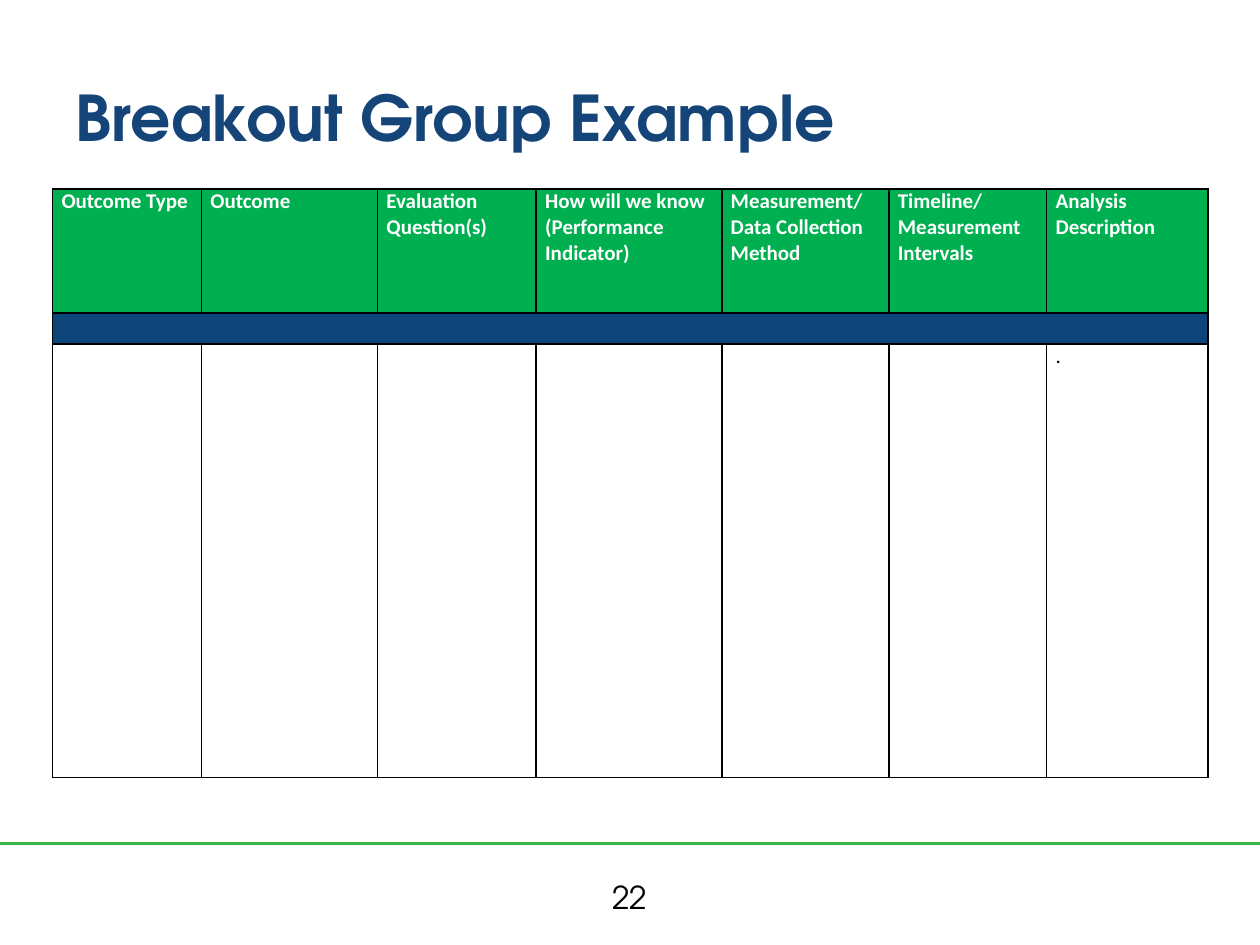
from dataclasses import dataclass

import lxml.etree
import pptx
import pptx.dml.color
import pptx.enum.shapes
import pptx.enum.text
import pptx.oxml.ns
import pptx.util

Cm = pptx.util.Cm
Pt = pptx.util.Pt
Align = pptx.enum.text.PP_ALIGN
Anchor = pptx.enum.text.MSO_ANCHOR
qn = pptx.oxml.ns.qn


@dataclass(frozen=True)
class Theme:
    display: str = "TeX Gyre Adventor"
    body: str = "Calibri"
    title_size: float = 36
    number_size: float = 18
    table_size: float = 12
    navy: str = "154578"
    band: str = "0D4479"
    header: str = "00B050"
    rule: str = "39B54A"
    black: str = "000000"
    white: str = "FFFFFF"


THEME = Theme()

HEADINGS = [
    ["Outcome Type"],
    ["Outcome"],
    ["Evaluation Question(s)"],
    ["How will we know", "(Performance Indicator)"],
    ["Measurement/", "Data Collection Method"],
    ["Timeline/", "Measurement Intervals"],
    ["Analysis Description"],
]
COLUMN_WIDTHS = [3, 3.55, 3.2, 3.74, 3.37, 3.18, 3.25]
ROW_HEIGHTS = [2.5, 0.62, 8.74]


def rgb(value):
    return pptx.dml.color.RGBColor.from_string(value)


def style(para, name, size, color, bold=False):
    font = para.font
    font.name, font.size, font.bold = name, Pt(size), bold
    font.color.rgb = rgb(color)


def add_text(page, text, left, top, width, height, size, color,
             bold=False, align=Align.LEFT, anchor=Anchor.TOP):
    box = page.shapes.add_textbox(Cm(left), Cm(top), Cm(width), Cm(height))
    frame = box.text_frame
    frame.word_wrap = True
    frame.vertical_anchor = anchor
    para = frame.paragraphs[0]
    para.text = text
    para.alignment = align
    style(para, THEME.display, size, color, bold)


def add_rule(page, top, width):
    rule = page.shapes.add_connector(
        pptx.enum.shapes.MSO_CONNECTOR.STRAIGHT, 0, Cm(top), Cm(width), Cm(top))
    rule.line.color.rgb = rgb(THEME.rule)
    rule.line.width = Pt(1.5)
    lxml.etree.SubElement(rule._element.spPr, qn("a:effectLst"))


def add_borders(cell):
    properties = cell._tc.get_or_add_tcPr()
    for position, side in enumerate(("lnL", "lnR", "lnT", "lnB")):
        line = lxml.etree.Element(qn(f"a:{side}"), w=str(Pt(1)))
        fill = lxml.etree.SubElement(line, qn("a:solidFill"))
        lxml.etree.SubElement(fill, qn("a:srgbClr"), val=THEME.black)
        properties.insert(position, line)


def fill_cell(cell, lines, fill, color, bold=False):
    cell.margin_left = cell.margin_right = Cm(0.18)
    cell.margin_top = cell.margin_bottom = 0
    if fill:
        cell.fill.solid()
        cell.fill.fore_color.rgb = rgb(fill)
    else:
        cell.fill.background()
    cell.text_frame.text = "\n".join(lines)
    for para in cell.text_frame.paragraphs:
        style(para, THEME.body, THEME.table_size, color, bold)
        if not para.runs:
            # An empty cell still takes its line height from this size
            lxml.etree.SubElement(para._p, qn("a:endParaRPr"),
                                  sz=str(THEME.table_size * 100))
    add_borders(cell)


def add_outcome_table(page, left, top):
    table = page.shapes.add_table(
        len(ROW_HEIGHTS), len(COLUMN_WIDTHS), Cm(left), Cm(top),
        Cm(sum(COLUMN_WIDTHS)), Cm(sum(ROW_HEIGHTS))).table
    for column, width in zip(table.columns, COLUMN_WIDTHS):
        column.width = Cm(width)
    for row, height in zip(table.rows, ROW_HEIGHTS):
        row.height = Cm(height)

    last = len(COLUMN_WIDTHS) - 1
    for index, heading in enumerate(HEADINGS):
        fill_cell(table.cell(0, index), heading, THEME.header, THEME.white, True)
        fill_cell(table.cell(1, index), [], THEME.band, THEME.white)
        fill_cell(table.cell(2, index), ["."] if index == last else [],
                  None, THEME.black)
    table.cell(1, 0).merge(table.cell(1, last))


def main():
    deck = pptx.Presentation()
    deck.slide_width, deck.slide_height = Cm(25.4), Cm(19.05)
    page = deck.slides.add_slide(deck.slide_layouts[6])

    # Footer rule
    add_rule(page, 17, 25.4)

    # Title and page number
    add_text(page, "Breakout Group Example", 1.27, 0.76, 22.86, 3.18,
             THEME.title_size, THEME.navy, bold=True, anchor=Anchor.MIDDLE)
    add_text(page, "22", 9.74, 17.58, 5.92, 1.02,
             THEME.number_size, THEME.black, align=Align.CENTER)

    # Outcome planning table
    add_outcome_table(page, 1.06, 3.81)

    deck.save("out.pptx")


if __name__ == "__main__":
    main()
